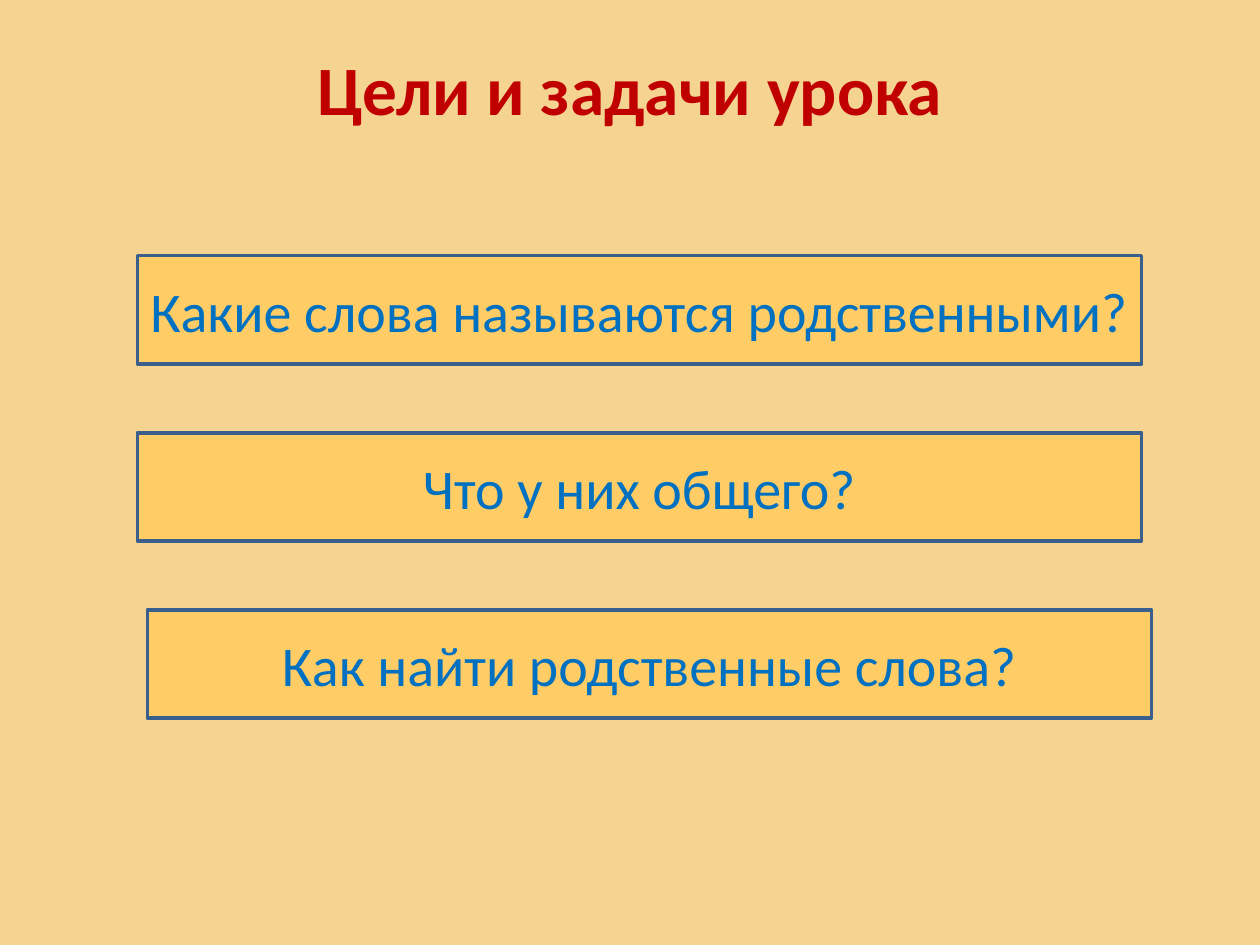
from pptx import Presentation
from pptx.dml.color import RGBColor
from pptx.enum.shapes import MSO_SHAPE
from pptx.enum.text import MSO_ANCHOR, PP_ALIGN
from pptx.util import Inches, Pt

BACKGROUND = RGBColor(0xF5, 0xD4, 0x91)
TITLE_RED = RGBColor(0xC0, 0x00, 0x00)
BOX_FILL = RGBColor(0xFF, 0xCC, 0x66)
BOX_LINE = RGBColor(0x3A, 0x5F, 0x8C)
QUESTION_BLUE = RGBColor(0x00, 0x70, 0xC0)

QUESTIONS = [
    (1.09, "Какие слова называются родственными?"),
    (1.09, "Что у них общего?"),
    (1.17, "Как найти родственные слова?"),
]
FIRST_TOP, STEP = 2.03, 1.405


def write_centred(shape, text, size, color, bold=False):
    frame = shape.text_frame
    frame.word_wrap = True
    frame.vertical_anchor = MSO_ANCHOR.MIDDLE
    frame.margin_left = frame.margin_right = Inches(0.05)
    paragraph = frame.paragraphs[0]
    paragraph.alignment = PP_ALIGN.CENTER
    run = paragraph.add_run()
    run.text = text
    run.font.name = "Calibri"
    run.font.size = Pt(size)
    run.font.bold = bold
    run.font.color.rgb = color


def add_title(slide, left, top, width, height):
    title = slide.shapes.add_textbox(
        Inches(left), Inches(top), Inches(width), Inches(height))
    write_centred(title, "Цели и задачи урока", 39.6, TITLE_RED, bold=True)


def add_question(slide, left, top, width, height, text):
    box = slide.shapes.add_shape(
        MSO_SHAPE.RECTANGLE,
        Inches(left), Inches(top), Inches(width), Inches(height))
    box.shadow.inherit = False
    box.fill.solid()
    box.fill.fore_color.rgb = BOX_FILL
    box.line.color.rgb = BOX_LINE
    box.line.width = Pt(2)
    write_centred(box, text, 32, QUESTION_BLUE)


def main():
    presentation = Presentation()
    presentation.slide_width = Inches(10)
    presentation.slide_height = Inches(7.5)
    slide = presentation.slides.add_slide(presentation.slide_layouts[6])
    slide.background.fill.solid()
    slide.background.fill.fore_color.rgb = BACKGROUND
    add_title(slide, 0.5, 0.3, 9, 0.79)
    for index, (left, text) in enumerate(QUESTIONS):
        add_question(slide, left, FIRST_TOP + index * STEP, 7.97, 0.86, text)
    presentation.save("out.pptx")


if __name__ == "__main__":
    main()
